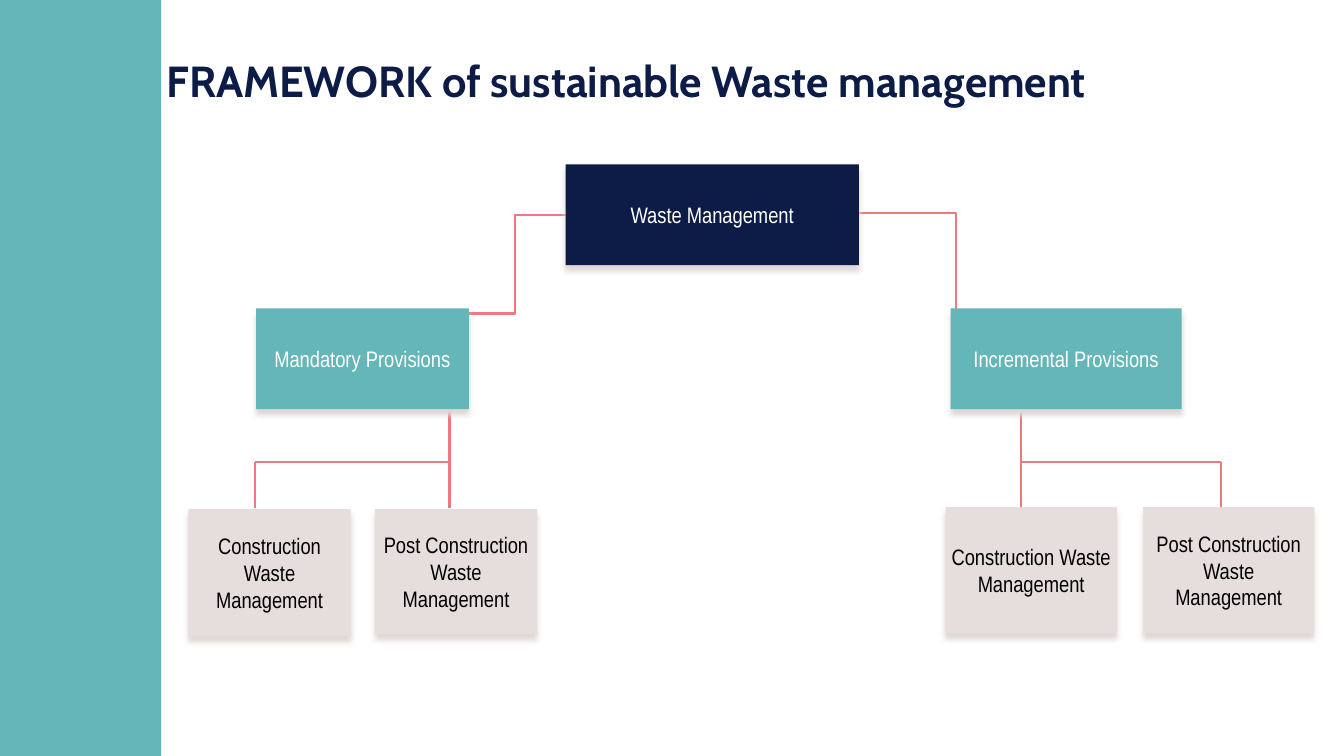
from collections import namedtuple

from lxml.etree import SubElement
from pptx import Presentation
from pptx.dml.color import RGBColor
from pptx.enum.shapes import MSO_CONNECTOR, MSO_SHAPE
from pptx.enum.text import MSO_ANCHOR, PP_ALIGN
from pptx.oxml.ns import qn
from pptx.util import Pt

NAVY, TEAL, SAND, CORAL = "0D1C47", "64B6B8", "E6DEDC", "EE787D"
WHITE, BLACK, SHADOW = "FFFFFF", "000000", "DFD9D7"
INSET = 3.6
LEAF_LABELS = ("Construction Waste Management", "Post Construction Waste Management")

Box = namedtuple("Box", "left top width height")


def color(hex_code):
    """Turn a hex string into a colour."""
    return RGBColor.from_string(hex_code)


def set_frame(frame, anchor):
    """Give a text frame its wrapping, insets and anchor."""
    frame.word_wrap = True
    frame.vertical_anchor = anchor
    frame.margin_left = frame.margin_right = Pt(INSET)
    frame.margin_top = frame.margin_bottom = Pt(INSET)


def set_font(para, name, size, hex_code, bold=False):
    """Set the font of a whole paragraph."""
    para.font.name = name
    para.font.size = Pt(size)
    para.font.bold = bold
    para.font.color.rgb = color(hex_code)


def add_rectangle(page, box, fill):
    """Draw a plain filled rectangle without outline."""
    shape = page.shapes.add_shape(MSO_SHAPE.RECTANGLE, *map(Pt, box))
    shape.shadow.inherit = False
    shape.fill.solid()
    shape.fill.fore_color.rgb = color(fill)
    shape.line.fill.background()
    return shape


def add_node(page, box, label, fill, ink):
    """Draw a labelled chart box with a soft shadow below it."""
    shape = add_rectangle(page, box, fill)
    effects = shape._element.spPr.find(qn("a:effectLst"))
    shadow = SubElement(effects, qn("a:outerShdw"), blurRad=str(Pt(4)),
                        dist=str(Pt(4)), dir="5400000", rotWithShape="0")
    SubElement(shadow, qn("a:srgbClr"), val=SHADOW)
    set_frame(shape.text_frame, MSO_ANCHOR.MIDDLE)
    para = shape.text_frame.paragraphs[0]
    para.text = label
    para.alignment = PP_ALIGN.CENTER
    set_font(para, "Arial Narrow", 16, ink)


def add_line(page, start, end, kind=MSO_CONNECTOR.STRAIGHT):
    """Draw a coral connector between two points."""
    connector = page.shapes.add_connector(kind, *map(Pt, start + end))
    connector.line.color.rgb = color(CORAL)
    connector.line.width = Pt(1.5)
    SubElement(connector._element.spPr, qn("a:effectLst"))
    return connector


def add_title(page, box, text):
    """Place and format the slide title."""
    title = page.shapes.title
    title.left, title.top, title.width, title.height = map(Pt, box)
    set_frame(title.text_frame, MSO_ANCHOR.TOP)
    para = title.text_frame.paragraphs[0]
    para.text = text
    para.alignment = PP_ALIGN.LEFT
    set_font(para, "Cabin", 31, NAVY, bold=True)


def add_root(page, box):
    """Draw the top box and the two elbows leading down from it."""
    middle = box.top + box.height / 2
    right = box.left + box.width
    add_line(page, (box.left, middle), (box.left - 72, middle + 70.5), MSO_CONNECTOR.ELBOW)
    elbow = add_line(page, (right - 2.9, middle - 1.5), (right + 69.1, middle + 70.5),
                     MSO_CONNECTOR.ELBOW)
    guides = elbow._element.spPr.find(qn("a:prstGeom")).find(qn("a:avLst"))
    SubElement(guides, qn("a:gd"), name="adj1", fmla="val 100000")
    add_node(page, box, "Waste Management", NAVY, WHITE)


def add_branch(page, box, label, trunk, side, leaves):
    """Draw a provisions box with its tree lines and leaf boxes."""
    bottom = box.top + box.height
    bus, line_end = bottom + 38, bottom + 70.5
    trunk_x, side_x = box.left + trunk, box.left + side
    add_line(page, (trunk_x, bottom), (trunk_x, line_end))
    add_line(page, (trunk_x, bus), (side_x, bus))
    add_line(page, (side_x, bus), (side_x, line_end))
    add_node(page, box, label, TEAL, WHITE)
    for leaf, leaf_label in zip(leaves, LEAF_LABELS):
        placed = Box(box.left + leaf.left, box.top + leaf.top, leaf.width, leaf.height)
        add_node(page, placed, leaf_label, SAND, BLACK)


def main():
    """Build the framework slide and save it."""
    deck = Presentation()
    deck.slide_width, deck.slide_height = Pt(960), Pt(540)
    page = deck.slides.add_slide(deck.slide_layouts[5])
    add_rectangle(page, Box(0, 0, 115.2, 540), TEAL)
    add_title(page, Box(115.2, 35.3, 695.5, 81.2),
              "FRAMEWORK of sustainable Waste management")
    add_root(page, Box(404, 117.4, 209.5, 72))
    add_branch(page, Box(182.9, 220.3, 152, 72), "Mandatory Provisions", 138.2, -0.7,
               (Box(-48.3, 143.3, 116, 90.7), Box(84.9, 143.3, 116, 89.3)))
    add_branch(page, Box(679, 220.3, 165, 72), "Incremental Provisions", 50.4, 193,
               (Box(-3.6, 141.9, 122.4, 90), Box(137.5, 141.9, 122.4, 90)))
    deck.save("out.pptx")


if __name__ == "__main__":
    main()
